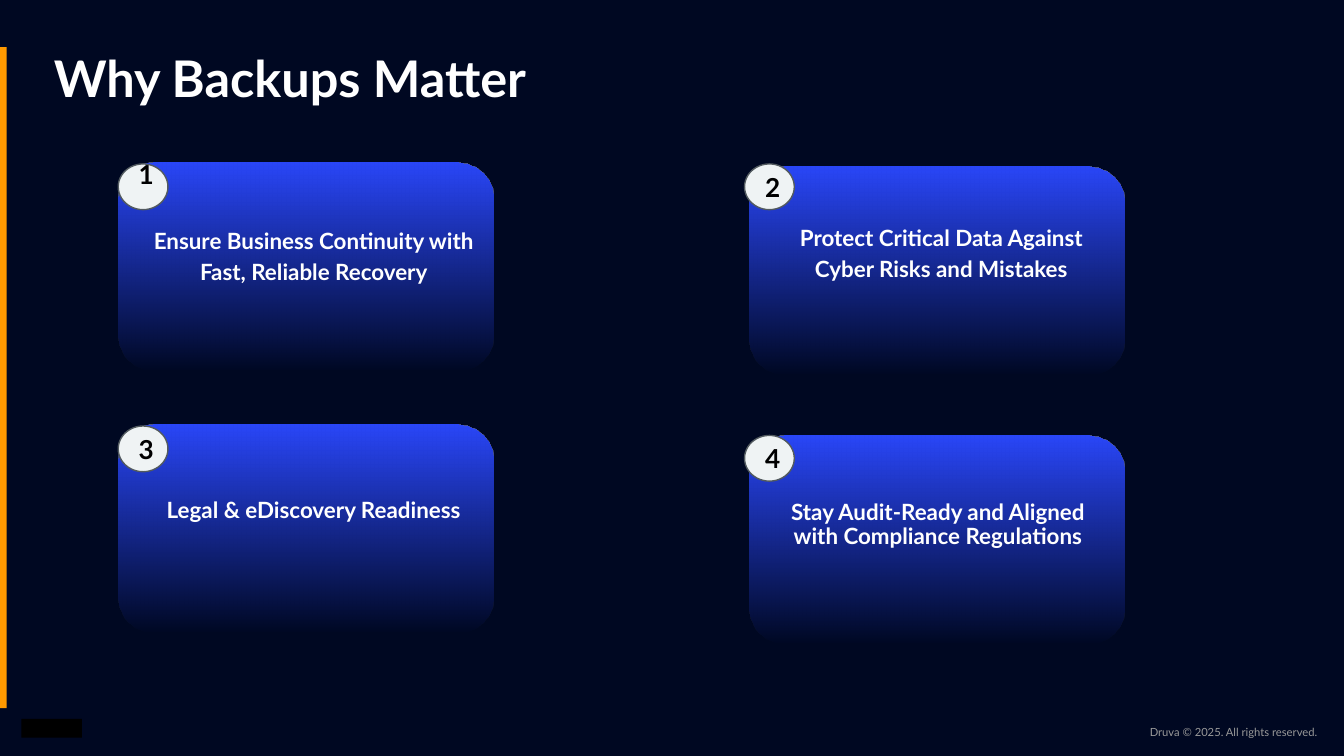
from dataclasses import dataclass

from lxml.etree import SubElement
from pptx import Presentation
from pptx.dml.color import RGBColor
from pptx.enum.shapes import MSO_SHAPE
from pptx.enum.text import MSO_ANCHOR, PP_ALIGN
from pptx.oxml.ns import qn
from pptx.shapes.autoshape import Shape
from pptx.slide import Slide
from pptx.util import Inches, Pt


@dataclass(frozen=True)
class Theme:
    font: str = "Lato"
    background: str = "000822"
    accent: str = "FF9900"
    card: str = "2A47F9"
    badge: str = "EFF3F4"
    badge_line: str = "525A5F"
    light: str = "FFFFFF"
    dark: str = "000000"
    muted: str = "999999"
    title_size: float = 27
    badge_size: float = 14
    caption_size: float = 12
    footer_size: float = 6


@dataclass(frozen=True)
class Box:
    left: float
    top: float
    width: float
    height: float

    def lengths(self) -> tuple[int, ...]:
        return tuple(Inches(side) for side in (self.left, self.top, self.width, self.height))


@dataclass(frozen=True)
class Reason:
    number: int
    caption: str
    card: Box
    caption_box: Box
    badge: Box
    line_spacing: float = 1.0
    badge_anchor: MSO_ANCHOR = MSO_ANCHOR.MIDDLE


THEME = Theme()
SLIDE_WIDTH = 10
SLIDE_HEIGHT = SLIDE_WIDTH * 9 / 16
CARD_SIZE = (2.79, 1.55)
BADGE_SIZE = (0.37, 0.34)
REASONS = (
    Reason(1, "Ensure Business Continuity with Fast, Reliable Recovery",
           Box(0.88, 1.21, *CARD_SIZE), Box(0.94, 1.56, 2.79, 0.57),
           Box(0.88, 1.22, *BADGE_SIZE), 1.15, MSO_ANCHOR.BOTTOM),
    Reason(2, "Protect Critical Data Against Cyber Risks and Mistakes",
           Box(5.58, 1.24, *CARD_SIZE), Box(5.64, 1.54, 2.73, 0.26),
           Box(5.54, 1.22, *BADGE_SIZE), 1.15),
    Reason(3, "Legal & eDiscovery Readiness",
           Box(0.88, 3.16, *CARD_SIZE), Box(1.03, 3.59, 2.61, 0.26),
           Box(0.88, 3.17, *BADGE_SIZE)),
    Reason(4, "Stay Audit-Ready and Aligned with Compliance Regulations",
           Box(5.58, 3.24, *CARD_SIZE), Box(5.63, 3.63, 2.7, 0.26),
           Box(5.54, 3.24, *BADGE_SIZE), 0.9),
)


def write(shape: Shape, text: str, size: float, color: str, bold: bool = True,
          align: PP_ALIGN = PP_ALIGN.LEFT, anchor: MSO_ANCHOR = MSO_ANCHOR.TOP,
          inset: float = 0, line_spacing: float = 1.0) -> None:
    """Put one formatted paragraph into a shape."""
    frame = shape.text_frame
    frame.text = text
    frame.word_wrap = True
    frame.vertical_anchor = anchor
    frame.margin_left = frame.margin_right = Inches(inset)
    frame.margin_top = frame.margin_bottom = Inches(inset)
    paragraph = frame.paragraphs[0]
    paragraph.alignment = align
    paragraph.line_spacing = line_spacing
    font = paragraph.runs[0].font
    font.name = THEME.font
    font.size = Pt(size)
    font.bold = bold
    font.color.rgb = RGBColor.from_string(color)


def add_solid(slide: Slide, kind: MSO_SHAPE, box: Box, color: str) -> Shape:
    """Add a plain filled shape without outline or shadow."""
    shape = slide.shapes.add_shape(kind, *box.lengths())
    shape.shadow.inherit = False
    shape.fill.solid()
    shape.fill.fore_color.rgb = RGBColor.from_string(color)
    shape.line.fill.background()
    return shape


def add_card(slide: Slide, box: Box) -> None:
    """Add a rounded card that fades out towards its bottom edge."""
    card = add_solid(slide, MSO_SHAPE.ROUNDED_RECTANGLE, box, THEME.card)
    card.adjustments[0] = 0.17
    card.fill.gradient()
    card.fill.gradient_angle = 270
    for stop, position in zip(card.fill.gradient_stops, (0, 1)):
        stop.position = position
        stop.color.rgb = RGBColor.from_string(THEME.card)
    last_color = list(card.element.spPr.iter(qn("a:srgbClr")))[-1]
    SubElement(last_color, qn("a:alpha"), val="0")


def add_badge(slide: Slide, reason: Reason) -> None:
    """Add the numbered circle of a card."""
    badge = add_solid(slide, MSO_SHAPE.OVAL, reason.badge, THEME.badge)
    badge.line.color.rgb = RGBColor.from_string(THEME.badge_line)
    badge.line.width = Pt(0.75)
    write(badge, str(reason.number), THEME.badge_size, THEME.dark,
          anchor=reason.badge_anchor, inset=0.1)


def main() -> None:
    """Build the slide and save it."""
    presentation = Presentation()
    presentation.slide_width = Inches(SLIDE_WIDTH)
    presentation.slide_height = Inches(SLIDE_HEIGHT)
    slide = presentation.slides.add_slide(presentation.slide_layouts[6])
    slide.background.fill.solid()
    slide.background.fill.fore_color.rgb = RGBColor.from_string(THEME.background)

    add_solid(slide, MSO_SHAPE.RECTANGLE, Box(0, 0.35, 0.05, 4.92), THEME.accent)
    footer = slide.shapes.add_textbox(*Box(7.8, 5.4, 2, 0.1).lengths())
    write(footer, "Druva © 2025. All rights reserved.", THEME.footer_size, THEME.muted,
          bold=False, align=PP_ALIGN.RIGHT)
    add_solid(slide, MSO_SHAPE.RECTANGLE, Box(0.16, 5.35, 0.45, 0.14), THEME.dark)

    for reason in REASONS:
        add_card(slide, reason.card)
    title = slide.shapes.add_textbox(*Box(0.4, 0.35, 9.25, 0.45).lengths())
    write(title, "Why Backups Matter", THEME.title_size, THEME.light)
    for reason in REASONS:
        caption = slide.shapes.add_textbox(*reason.caption_box.lengths())
        write(caption, reason.caption, THEME.caption_size, THEME.light,
              align=PP_ALIGN.CENTER, inset=0.1, line_spacing=reason.line_spacing)
        add_badge(slide, reason)

    presentation.save("out.pptx")


if __name__ == "__main__":
    main()
